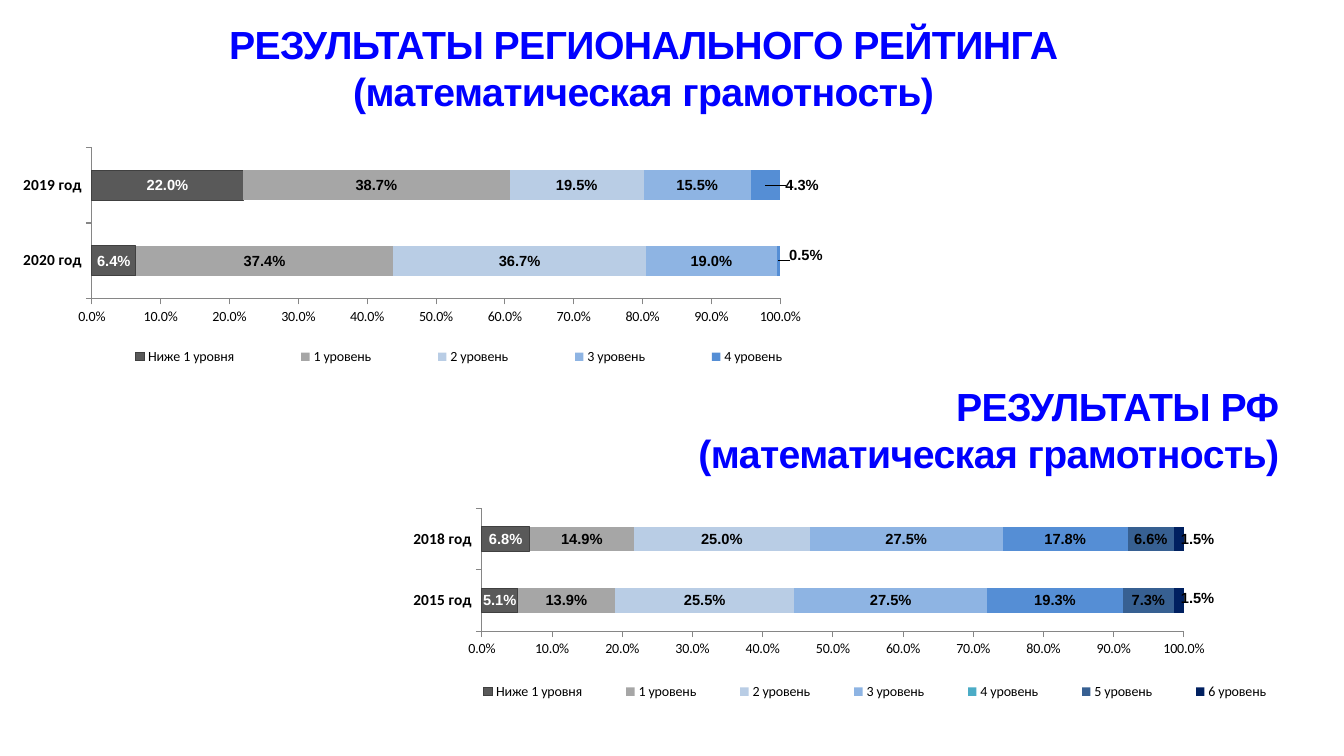
from lxml import etree
from pptx import Presentation
from pptx import util as u
from pptx.chart.data import CategoryChartData
from pptx.dml.color import RGBColor
from pptx.enum import chart as charts, text
from pptx.oxml import parse_xml
from pptx.oxml.ns import nsdecls, qn

PX = 914400 / 100.8


def color(value):
    return RGBColor.from_string(value)


def manual_layout(inner, **values):
    fields = "".join(f'<c:{name} val="{value}"/>' for name, value in values.items())
    return parse_xml(f'<c:layout {nsdecls("c")}><c:manualLayout>{inner}{fields}</c:manualLayout></c:layout>')


presentation = Presentation()
presentation.slide_width = u.Emu(round(1344 * PX))
presentation.slide_height = u.Emu(round(756 * PX))
slide = presentation.slides.add_slide(presentation.slide_layouts[5])

regional_heading = slide.shapes.title
national_heading = slide.shapes.add_textbox(0, 0, 0, 0)
headings = [
    (regional_heading, "РЕЗУЛЬТАТЫ РЕГИОНАЛЬНОГО РЕЙТИНГА", (175, 26, 937, 82), text.PP_ALIGN.CENTER),
    (national_heading, "РЕЗУЛЬТАТЫ РФ", (637, 388, 653, 82), text.PP_ALIGN.RIGHT),
]
for shape, heading, box, alignment in headings:
    shape.left, shape.top, shape.width, shape.height = [u.Emu(round(side * PX)) for side in box]
    frame = shape.text_frame
    frame.text = heading + "\v(математическая грамотность)"
    frame.word_wrap = True
    frame.auto_size = text.MSO_AUTO_SIZE.NONE
    frame.vertical_anchor = text.MSO_ANCHOR.MIDDLE
    frame.margin_left = frame.margin_right = u.Emu(round(11 * PX))
    frame.margin_top = frame.margin_bottom = u.Emu(round(6 * PX))
    paragraph = frame.paragraphs[0]
    paragraph.alignment = alignment
    for run in paragraph.runs:
        run.font.name = "Arial"
        run.font.size = u.Pt(28)
        run.font.bold = True
        run.font.color.rgb = color("0000FF")
        run.font._element.set("spc", "-40")

levels = ["Ниже 1 уровня"] + [f"{level} уровень" for level in range(1, 7)]
fills = ["595959", "A6A6A6", "B9CDE5", "8EB4E3", "558ED5", "376092", "002060"]
ratings = [
    {
        "box": (0, 121, 918, 265),
        "years": ["2020 год", "2019 год"],
        "shares": [(0.064, 0.22), (0.374, 0.387), (0.367, 0.195), (0.19, 0.155), (0.005, 0.043)],
        "plot": dict(x=0.1, y=0.1, w=0.75, h=0.57),
        "legend": dict(x=0.08, y=0.84, w=0.84, h=0.1),
        "label_shifts": [(0.03, -0.02), (0.04, 0)],
    },
    {
        "box": (407, 494, 936, 241),
        "years": ["2015 год", "2018 год"],
        "shares": [(0.051, 0.068), (0.139, 0.149), (0.255, 0.25), (0.275, 0.275),
                   (0.193, 0.178), (0.073, 0.066), (0.015, 0.015)],
        "plot": dict(x=0.08, y=0.06, w=0.75, h=0.51),
        "legend": dict(x=0.04, y=0.77, w=0.92, h=0.1),
        "label_shifts": [(0.02, -0.01), (0.02, 0)],
    },
]
for rating in ratings:
    data = CategoryChartData(number_format="0.0%")
    data.categories = rating["years"]
    for level, shares in zip(levels, rating["shares"]):
        data.add_series(level, shares)
    box = [u.Emu(round(side * PX)) for side in rating["box"]]
    chart = slide.shapes.add_chart(charts.XL_CHART_TYPE.BAR_STACKED, *box, data).chart
    chart.has_title = False
    chart.font.name = "Calibri"
    chart.font.size = u.Pt(10)
    chart.font.color.rgb = color("000000")

    plot_area = chart._chartSpace.chart.plotArea
    for layout in plot_area.findall(qn("c:layout")):
        plot_area.remove(layout)
    modes = '<c:xMode val="edge"/><c:yMode val="edge"/>'
    plot_area.insert(0, manual_layout('<c:layoutTarget val="inner"/>' + modes, **rating["plot"]))
    chart.has_legend = True
    chart.legend.position = charts.XL_LEGEND_POSITION.RIGHT
    chart.legend.include_in_layout = False
    legend = chart.legend._element
    for layout in legend.findall(qn("c:layout")):
        legend.remove(layout)
    legend.find(qn("c:legendPos")).addnext(manual_layout(modes, **rating["legend"]))

    for axis in (chart.category_axis, chart.value_axis):
        axis.major_tick_mark = charts.XL_TICK_MARK.OUTSIDE
        axis.minor_tick_mark = charts.XL_TICK_MARK.NONE
        axis.format.line.color.rgb = color("868686")
        axis.format.line.width = u.Pt(0.75)
    chart.category_axis.tick_labels.font.size = u.Pt(11)
    chart.category_axis.tick_labels.font.bold = True
    value_axis = chart.value_axis
    value_axis.minimum_scale, value_axis.maximum_scale, value_axis.major_unit = 0, 1, 0.1
    value_axis.tick_labels.number_format = "0.0%"
    value_axis.tick_labels.number_format_is_linked = False
    value_axis.major_gridlines.format.line.color.rgb = color("FFFFFF")
    value_axis.major_gridlines.format.line.width = u.Pt(0.75)

    plot = chart.plots[0]
    plot.vary_by_categories = False
    plot.gap_width, plot.overlap = 150, 100
    last = len(rating["shares"]) - 1
    for index, series in enumerate(plot.series):
        series.invert_if_negative = False
        series.format.fill.solid()
        series.format.fill.fore_color.rgb = color(fills[index])
        if index == 0:
            series.format.line.color.rgb = color("404040")
            series.format.line.width = u.Pt(0.75)
        if index == 4 and index < last:
            series.format.fill.fore_color.rgb = color("4BACC6")
            for position in range(2):
                point_fill = series.points[position].format.fill
                point_fill.solid()
                point_fill.fore_color.rgb = color(fills[index])
        labels = series.data_labels
        labels.show_value = True
        labels.number_format = "0.0%"
        labels.number_format_is_linked = False
        fonts = [labels.font]
        if index == last:
            fonts += [series.points[position].data_label.font for position in range(2)]
        for font in fonts:
            font.name = "Arial"
            font.size = u.Pt(10.5)
            font.bold = True
            font.color.rgb = color("000000" if index else "FFFFFF")
        for label, (x, y) in zip(labels._element.findall(qn("c:dLbl")), rating["label_shifts"]):
            layout = manual_layout("", x=x, y=y)
            label.find(qn("c:idx")).addnext(layout)
            number_format = etree.Element(qn("c:numFmt"), formatCode="0.0%", sourceLinked="0")
            layout.addnext(number_format)

presentation.save("out.pptx")
